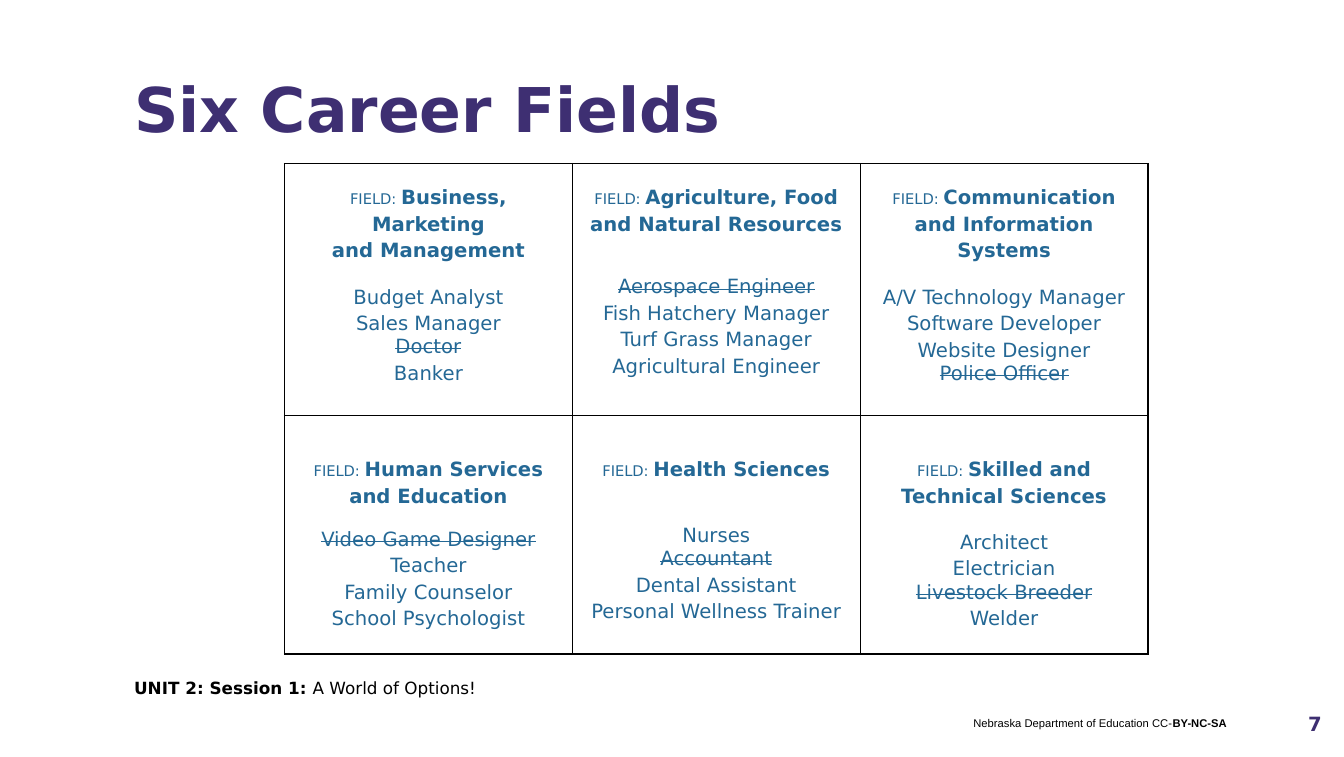
from lxml.etree import SubElement
from pptx import Presentation
from pptx.dml.color import RGBColor
from pptx.enum.text import MSO_ANCHOR, PP_ALIGN
from pptx.oxml import parse_xml
from pptx.oxml.ns import nsdecls
from pptx.util import Inches, Pt

W, H = Inches(13.32), Inches(7.5)
COLORS = {"title": "3E2F72", "number": "3E2F71", "field": "246895", "ink": "000000"}
SANS, ARIAL = "DejaVu Sans", "Arial"
ROW_WEIGHTS = (250, 236)
ROW_TOPS = (Pt(14), Pt(28))
FIELDS = [
    [
        (["Business, Marketing", "and Management"], 14,
         ["Budget Analyst", "Sales Manager", "Doctor", "Banker"], "Doctor"),
        (["Agriculture, Food", "and Natural Resources"], 28,
         ["Aerospace Engineer", "Fish Hatchery Manager", "Turf Grass Manager",
          "Agricultural Engineer"], "Aerospace Engineer"),
        (["Communication", "and Information Systems"], 14,
         ["A/V Technology Manager", "Software Developer", "Website Designer",
          "Police Officer"], "Police Officer"),
    ],
    [
        (["Human Services", "and Education"], 14,
         ["Video Game Designer", "Teacher", "Family Counselor",
          "School Psychologist"], "Video Game Designer"),
        (["Health Sciences"], 28,
         ["Nurses", "Accountant", "Dental Assistant",
          "Personal Wellness Trainer"], "Accountant"),
        (["Skilled and", "Technical Sciences"], 14,
         ["Architect", "Electrician", "Livestock Breeder", "Welder"],
         "Livestock Breeder"),
    ],
]


def share(x, y, w, h):
    """Turn percentages of the slide size into a box."""
    return int(W * x / 100), int(H * y / 100), int(W * w / 100), int(H * h / 100)


def set_font(font, size, color, bold=None, name=SANS):
    """Format one font."""
    font.name, font.size, font.bold = name, Pt(size), bold
    font.color.rgb = RGBColor.from_string(COLORS[color])


def set_frame(tf, anchor=MSO_ANCHOR.TOP):
    """Wrap a text frame and drop its insets."""
    tf.word_wrap = True
    tf.vertical_anchor = anchor
    tf.margin_left = tf.margin_right = tf.margin_top = tf.margin_bottom = 0


def add_title(s, box, text):
    """Place the title placeholder in its box."""
    sp = s.shapes.title
    sp.left, sp.top, sp.width, sp.height = box
    set_frame(sp.text_frame)
    p = sp.text_frame.paragraphs[0]
    p.text, p.alignment = text, PP_ALIGN.LEFT
    set_font(p.font, 44, "title", True)


def add_note(s, box, runs, size, color="ink", name=SANS,
             align=PP_ALIGN.LEFT, anchor=MSO_ANCHOR.TOP):
    """Add a one-line text of (text, bold) runs."""
    tf = s.shapes.add_textbox(*box).text_frame
    set_frame(tf, anchor)
    p = tf.paragraphs[0]
    p.alignment = align
    set_font(p.font, size, color, name=name)
    for text, bold in runs:
        r = p.add_run()
        r.text, r.font.bold = text, bold


def add_line(tf, first=False):
    """Start a centred line in a table cell."""
    p = tf.paragraphs[0] if first else tf.add_paragraph()
    p.alignment, p.line_spacing = PP_ALIGN.CENTER, 1.15
    return p


def add_run(p, text, size=14, bold=False):
    """Add a run in the field colour."""
    r = p.add_run()
    r.text = text
    set_font(r.font, size, "field", bold)
    return r


def add_borders(cell):
    """Draw a thin line on each side of a cell."""
    tc_pr = cell._tc.get_or_add_tcPr()
    for i, side in enumerate(("lnL", "lnR", "lnT", "lnB")):
        ln = parse_xml(f'<a:{side} {nsdecls("a")} w="12700"/>')
        fill = SubElement(ln, ln.tag.replace(side, "solidFill"))
        SubElement(fill, ln.tag.replace(side, "srgbClr"), val=COLORS["ink"])
        tc_pr.insert(i, ln)


def fill_cell(cell, top, names, gap, jobs, misfit):
    """Write a career field and its jobs, striking the misfit."""
    cell.fill.background()
    add_borders(cell)
    cell.margin_left = cell.margin_right = Inches(0.07)
    cell.margin_top, cell.margin_bottom = top, 0
    tf = cell.text_frame
    for i, name in enumerate(names):
        p = add_line(tf, i == 0)
        if i == 0:
            add_run(p, "FIELD: ", 10.5)
        add_run(p, name, bold=True)
    for i, job in enumerate(jobs):
        p = add_line(tf)
        if i == 0:
            p.space_before = Pt(gap)
        r = add_run(p, job)
        if job == misfit:
            p.line_spacing = 1.0
            r.font._element.set("strike", "sngStrike")


def add_fields(s, box):
    """Add the table of career fields."""
    cols = len(FIELDS[0])
    table = s.shapes.add_table(len(FIELDS), cols, *box).table
    table.first_row = table.horz_banding = False
    for col in table.columns:
        col.width = box[2] // cols
    for i, (row, weight) in enumerate(zip(FIELDS, ROW_WEIGHTS)):
        table.rows[i].height = box[3] * weight // sum(ROW_WEIGHTS)
        for j, field in enumerate(row):
            fill_cell(table.cell(i, j), ROW_TOPS[i], *field)


def main():
    """Build and save the slide."""
    prs = Presentation()
    prs.slide_width, prs.slide_height = W, H
    s = prs.slides.add_slide(prs.slide_layouts[5])
    add_note(s, share(94.97, 93.07, 3.38, 4.93), [("7", True)], 14, "number",
             align=PP_ALIGN.RIGHT, anchor=MSO_ANCHOR.MIDDLE)
    add_note(s, share(63.06, 94.67, 28.23, 3.33),
             [("Nebraska Department of Education CC-", False), ("BY-NC-SA", True)],
             8, name=ARIAL, align=PP_ALIGN.RIGHT)
    add_note(s, share(9.98, 89.47, 35.29, 5.73),
             [("UNIT 2: Session 1: ", True), ("A World of Options!", False)], 12)
    add_title(s, share(9.98, 9.33, 84.98, 13.73), "Six Career Fields")
    add_fields(s, share(21.17, 21.6, 64.26, 64.8))
    prs.save("out.pptx")


if __name__ == "__main__":
    main()
